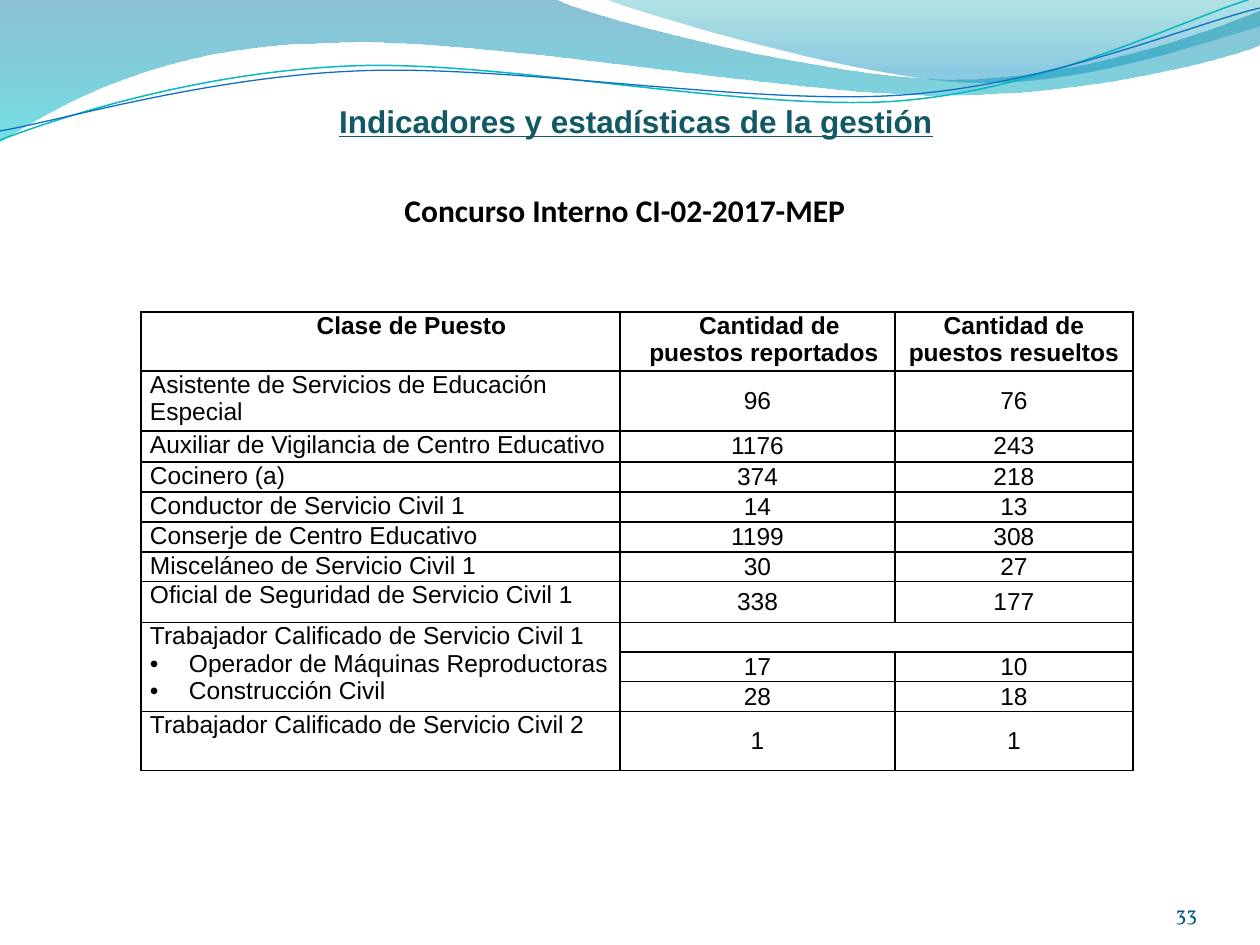
from lxml import etree
from pptx import Presentation
from pptx.dml.color import RGBColor
from pptx.enum.text import MSO_ANCHOR, PP_ALIGN
from pptx.oxml.ns import qn
from pptx.util import Emu, Pt

TOP, MIDDLE, BOTTOM = MSO_ANCHOR.TOP, MSO_ANCHOR.MIDDLE, MSO_ANCHOR.BOTTOM
LEFT, CENTER, RIGHT = PP_ALIGN.LEFT, PP_ALIGN.CENTER, PP_ALIGN.RIGHT

BLACK = RGBColor(0x00, 0x00, 0x00)
TITLE_TEAL = RGBColor(0x11, 0x59, 0x64)
NUMBER_TEAL = RGBColor(0x04, 0x5D, 0x75)
DEEP_BLUE = RGBColor(0x00, 0x74, 0xA1)
AQUA = RGBColor(0x00, 0xC6, 0xCF)
SEA_GREEN = RGBColor(0x00, 0xA1, 0xA9)
SKY_BLUE = RGBColor(0x00, 0x8B, 0xBF)
LINE_AQUA = RGBColor(0x0A, 0xB8, 0xBF)
LINE_BLUE = RGBColor(0x0F, 0x6F, 0xC6)

PX = 914400 / 126

# An outline is a start point, then lines (one point) and Bezier curves (three points).
BAND = [(0, 0), [(554, -1)],
        [(600, 21), (837, 79), (955, 79)], [(1075, 79), (1207, 33), (1260, 11)],
        [(1261, 45)],
        [(1239, 55), (1096, 96), (940, 95)], [(783, 95), (481, 35), (324, 43)],
        [(163, 45), (58, 105), (-1, 142)]]
CREST = [(604, -1), [(641, 14), (859, 78), (969, 82)],
         [(1079, 87), (1211, 40), (1260, 26)], [(1260, 0)]]
AQUA_WAVE = [(0, 140), [(60, 117), (199, 72), (349, 66)],
             [(498, 59), (747, 112), (898, 101)], [(1050, 89), (1182, 19), (1257, -3)]]
BLUE_WAVE = [(0, 131), [(59, 121), (207, 77), (357, 71)],
             [(508, 64), (752, 106), (903, 95)], [(1053, 84), (1186, 26), (1260, 8)]]

HEADERS = ["Clase de Puesto", "Cantidad de puestos reportados",
           "Cantidad de puestos resueltos"]
POSTS = [
    ("Asistente de Servicios de Educación Especial", "96", "76"),
    ("Auxiliar de Vigilancia de Centro Educativo", "1176", "243"),
    ("Cocinero (a)", "374", "218"),
    ("Conductor de Servicio Civil 1", "14", "13"),
    ("Conserje de Centro Educativo", "1199", "308"),
    ("Misceláneo de Servicio Civil 1", "30", "27"),
    ("Oficial de Seguridad de Servicio Civil 1", "338", "177"),
    ("Trabajador Calificado de Servicio Civil 1", "", ""),
    ("", "17", "10"),
    ("", "28", "18"),
    ("Trabajador Calificado de Servicio Civil 2", "1", "1"),
]
SPECIALTIES = ["Operador de Máquinas Reproductoras", "Construcción Civil"]
SPECIALTY_ROW = 8
COLUMN_WIDTHS = [479, 275, 238]
ROW_HEIGHTS = [59, 60, 31, 30, 30, 30, 29, 41, 30, 29, 30, 59]


def px(length):
    return Emu(round(length * PX))


def bend(shape, segments):
    """Turn the straight steps of each three-point segment into one Bezier curve."""
    steps = iter(list(shape._element.iter(qn("a:lnTo"))))
    for segment in segments:
        first, *others = [next(steps) for _ in segment]
        if others:
            first.tag = qn("a:cubicBezTo")
            curve = etree.Element(qn("a:cubicBezTo"))
            first.addprevious(curve)
            for step in (first, *others):
                curve.append(step[0])
                step.getparent().remove(step)


def write(paragraph, text, font="Arial", size=14, color=BLACK, bold=False,
          underline=False, align=LEFT, margin=0, indent=0, bullet=None):
    paragraph.alignment = align
    properties = paragraph._p.get_or_add_pPr()
    properties.set("marL", str(px(margin)))
    properties.set("indent", str(px(indent)))
    if bullet:
        etree.SubElement(properties, qn("a:buFont")).set("typeface", font)
        etree.SubElement(properties, qn("a:buChar")).set("char", bullet)
    if not text:
        etree.SubElement(paragraph._p, qn("a:endParaRPr")).set("sz", str(size * 100))
        return
    run = paragraph.add_run()
    run.text = text
    run.font.name, run.font.size = font, Pt(size)
    run.font.bold, run.font.underline = bold, underline
    run.font.color.rgb = color


def set_insets(holder, left, top, right, bottom):
    holder.margin_left, holder.margin_top = px(left), px(top)
    holder.margin_right, holder.margin_bottom = px(right), px(bottom)


def draw_borders(cell, hidden=""):
    properties = cell._tc.get_or_add_tcPr()
    for side in "LRTB":
        line = etree.SubElement(properties, qn(f"a:ln{side}"))
        line.set("w", str(Pt(1)))
        if side in hidden:
            etree.SubElement(line, qn("a:noFill"))
        else:
            fill = etree.SubElement(line, qn("a:solidFill"))
            etree.SubElement(fill, qn("a:srgbClr")).set("val", str(BLACK))


class SlideBuilder:
    def __init__(self, slide):
        self.slide = slide

    def outline(self, outline, close):
        start, *segments = outline
        builder = self.slide.shapes.build_freeform(*start, scale=PX)
        builder.add_line_segments([point for segment in segments for point in segment],
                                  close=close)
        shape = builder.convert_to_shape()
        bend(shape, segments)
        shape.shadow.inherit = False
        return shape

    def wave_area(self, outline, stops):
        """Fill a shape downwards with stops of (position, colour, opacity %)."""
        shape = self.outline(outline, True)
        shape.line.fill.background()
        shape.fill.gradient()
        shape.fill.gradient_angle = 270
        for stop, (position, color, opacity) in zip(shape.fill.gradient_stops, stops):
            stop.position = position
            stop.color.rgb = color
            rgb = stop._gs.find(qn("a:srgbClr"))
            etree.SubElement(rgb, qn("a:alpha")).set("val", str(opacity * 1000))

    def wave_line(self, outline, color, width):
        shape = self.outline(outline, False)
        shape.fill.background()
        shape.line.color.rgb = color
        shape.line.width = Pt(width)

    def label(self, box, text, anchor=TOP, insets=(0, 0, 0, 0), **style):
        frame = self.slide.shapes.add_textbox(*map(px, box)).text_frame
        frame.word_wrap = True
        frame.vertical_anchor = anchor
        set_insets(frame, *insets)
        write(frame.paragraphs[0], text, **style)

    def cell(self, cell, text, anchor=TOP, hidden="", **style):
        set_insets(cell, 9, 0, 9, 0)
        cell.vertical_anchor = anchor
        draw_borders(cell, hidden)
        cell.fill.background()
        write(cell.text_frame.paragraphs[0], text, **style)

    def posts_table(self, left, top):
        table = self.slide.shapes.add_table(
            len(ROW_HEIGHTS), len(COLUMN_WIDTHS), px(left), px(top),
            px(sum(COLUMN_WIDTHS)), px(sum(ROW_HEIGHTS))).table
        table.first_row = table.horz_banding = False
        for column, width in zip(table.columns, COLUMN_WIDTHS):
            column.width = px(width)
        for row, height in zip(table.rows, ROW_HEIGHTS):
            row.height = px(height)
        specialty_cell = table.cell(SPECIALTY_ROW, 0)
        specialty_cell.merge(table.cell(SPECIALTY_ROW + len(SPECIALTIES), 0))

        header_indents = [(62, 0), (13, 11), (0, 0)]
        for col, (header, (margin, indent)) in enumerate(zip(HEADERS, header_indents)):
            self.cell(table.cell(0, col), header, bold=True, align=CENTER,
                      margin=margin, indent=indent)
        for row, (post, reported, solved) in enumerate(POSTS, start=1):
            if not table.cell(row, 0).is_spanned:
                self.cell(table.cell(row, 0), post)
            open_row = row == SPECIALTY_ROW
            self.cell(table.cell(row, 1), reported, MIDDLE,
                      "R" if open_row else "", align=CENTER)
            self.cell(table.cell(row, 2), solved, MIDDLE,
                      "L" if open_row else "", align=CENTER)
        for specialty in SPECIALTIES:
            write(specialty_cell.text_frame.add_paragraph(), specialty,
                  margin=39, indent=-39, bullet="•")


def main():
    presentation = Presentation()
    presentation.slide_width, presentation.slide_height = px(1260), px(945)
    page = SlideBuilder(presentation.slides.add_slide(presentation.slide_layouts[6]))

    page.wave_area(BAND, [(0, DEEP_BLUE, 45), (1, AQUA, 55)])
    page.wave_area(CREST, [(0, SEA_GREEN, 30), (0.8, SKY_BLUE, 45)])
    page.wave_line(AQUA_WAVE, LINE_AQUA, 0.85)
    page.wave_line(BLUE_WAVE, LINE_BLUE, 0.75)

    page.label((64, 94, 1144, 53), "Indicadores y estadísticas de la gestión", MIDDLE,
               size=18, color=TITLE_TEAL, bold=True, underline=True, align=CENTER)
    page.label((1092, 876, 105, 50), "33", BOTTOM, font="Vollkorn", size=12,
               color=NUMBER_TEAL, align=RIGHT)
    page.label((164, 185, 922, 50), "Concurso Interno CI-02-2017-MEP",
               insets=(13, 6, 13, 6), font="Calibri", size=18, bold=True, align=CENTER)
    page.posts_table(141, 312)
    presentation.save("out.pptx")


if __name__ == "__main__":
    main()
